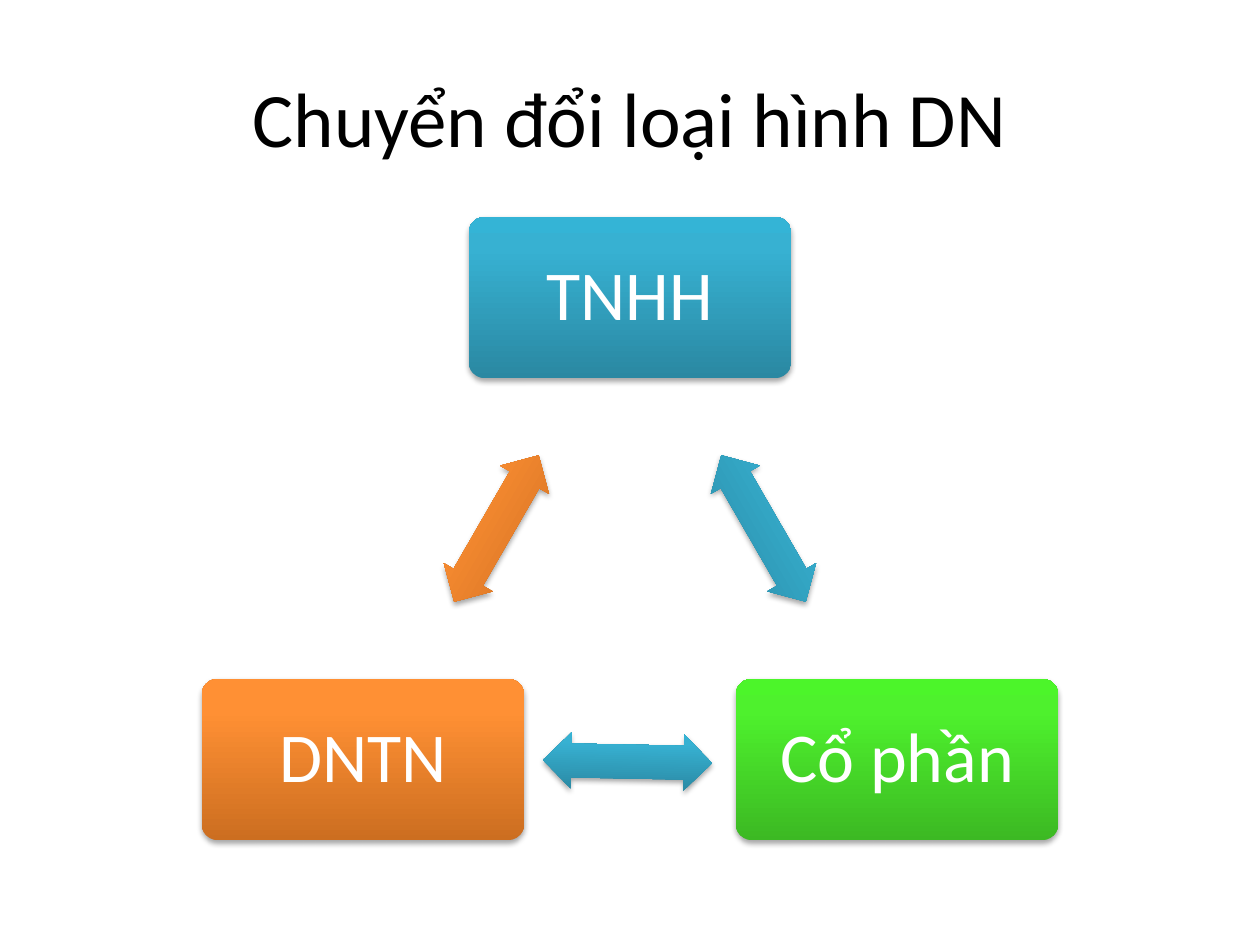
from lxml import etree
from pptx import Presentation
from pptx.dml.color import RGBColor
from pptx.enum import shapes, text
from pptx.oxml.ns import qn
from pptx.util import Pt

TITLE = "Chuyển đổi loại hình DN"
FONT = "Calibri"
HEX = {"black": "000000", "white": "FFFFFF"}
# Gradient stops run from the bottom edge (0 %) to the top edge (100 %)
GRADS = {
    "teal": [(0, "2A88A2"), (80, "37B1D2"), (100, "34B4D6")],
    "green": [(0, "3CB923"), (80, "4EF12D"), (100, "4CF52A")],
    "orange": [(0, "CC6E20"), (80, "FF9034"), (100, "FF9136")],
}
# Company types: label, colour, centre
NODES = [
    ("TNHH", "teal", (360, 170)),
    ("Cổ phần", "green", (512.6, 434)),
    ("DNTN", "orange", (207.4, 434)),
]
# Arrows: node indexes, colour, turn in degrees, shift from the midpoint
LINKS = [
    (0, 1, "teal", 60, (0, 0)),
    (2, 0, "orange", 300, (0, 0)),
    (1, 2, "teal", 1.1, (-1.4, 1.2)),
]
BOX = (184.4, 92.2)
ARROW = (96.6, 32.3)


def add(parent, tag, **attrs):
    return etree.SubElement(parent, qn(tag), {k: str(v) for k, v in attrs.items()})


def style(shape, color):
    """Gradient fill, no outline, soft shadow below."""
    shape.line.fill.background()
    shape.shadow.inherit = False
    props = shape.element.spPr
    grad = etree.Element(qn("a:gradFill"), rotWithShape="1")
    stops = add(grad, "a:gsLst")
    for pos, val in GRADS[color]:
        add(add(stops, "a:gs", pos=pos * 1000), "a:srgbClr", val=val)
    add(grad, "a:lin", ang=270 * 60000, scaled=0)
    props.find(qn("a:prstGeom")).addnext(grad)
    shade = add(props.find(qn("a:effectLst")), "a:outerShdw", blurRad=Pt(3.1),
                dist=Pt(1.8), dir=90 * 60000, rotWithShape=0)
    add(add(shade, "a:srgbClr", val=HEX["black"]), "a:alpha", val=35000)


def draw(kind, mid, size, color, adjs):
    (x, y), (w, h) = mid, size
    shape = slide.shapes.add_shape(kind, Pt(x - w / 2), Pt(y - h / 2), Pt(w), Pt(h))
    for i, adj in enumerate(adjs):
        shape.adjustments[i] = adj
    style(shape, color)
    return shape


def write(frame, label, size, color):
    frame.word_wrap = True
    frame.vertical_anchor = text.MSO_ANCHOR.MIDDLE
    para = frame.paragraphs[0]
    para.text = label
    para.alignment = text.PP_ALIGN.CENTER
    para.font.name, para.font.size = FONT, Pt(size)
    para.font.color.rgb = RGBColor.from_string(HEX[color])
    return para


prs = Presentation()
prs.slide_width, prs.slide_height = Pt(720), Pt(540)
slide = prs.slides.add_slide(prs.slide_layouts[5])

# Title
title = slide.shapes.title
title.left, title.top, title.width, title.height = Pt(36), Pt(21.6), Pt(648), Pt(90)
write(title.text_frame, TITLE, 44, "black")

# Boxes
for label, color, mid in NODES:
    box = draw(shapes.MSO_SHAPE.ROUNDED_RECTANGLE, mid, BOX, color, [0.1])
    frame = box.text_frame
    frame.margin_left = frame.margin_right = Pt(15)
    frame.margin_top = frame.margin_bottom = Pt(15)
    para = write(frame, label, 40, "white")
    para.line_spacing = 0.9
    para.space_after = Pt(14)

# Arrows, midway between the boxes they join
for a, b, color, turn, shift in LINKS:
    mid = [(p + q) / 2 + d for p, q, d in zip(NODES[a][2], NODES[b][2], shift)]
    arrow = draw(shapes.MSO_SHAPE.LEFT_RIGHT_ARROW, mid, ARROW, color, [0.6, 0.5])
    arrow.rotation = turn

prs.save("out.pptx")
